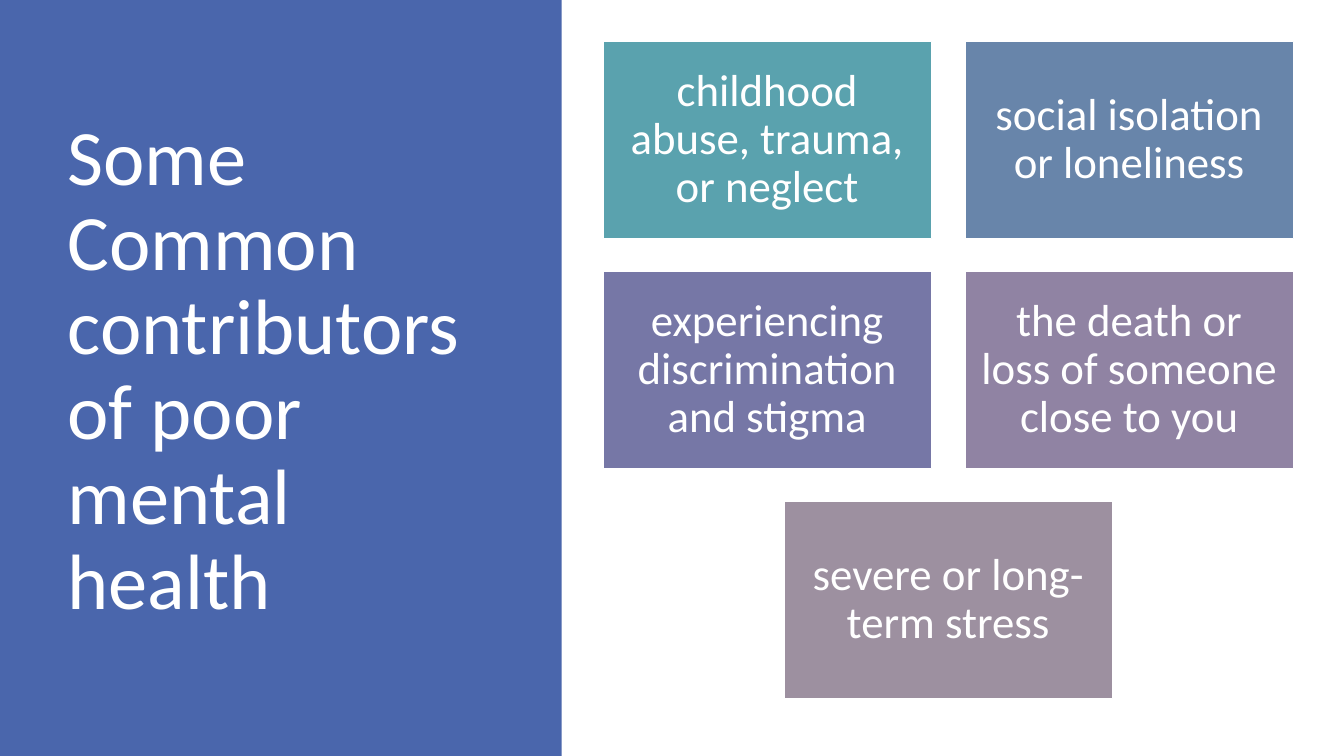
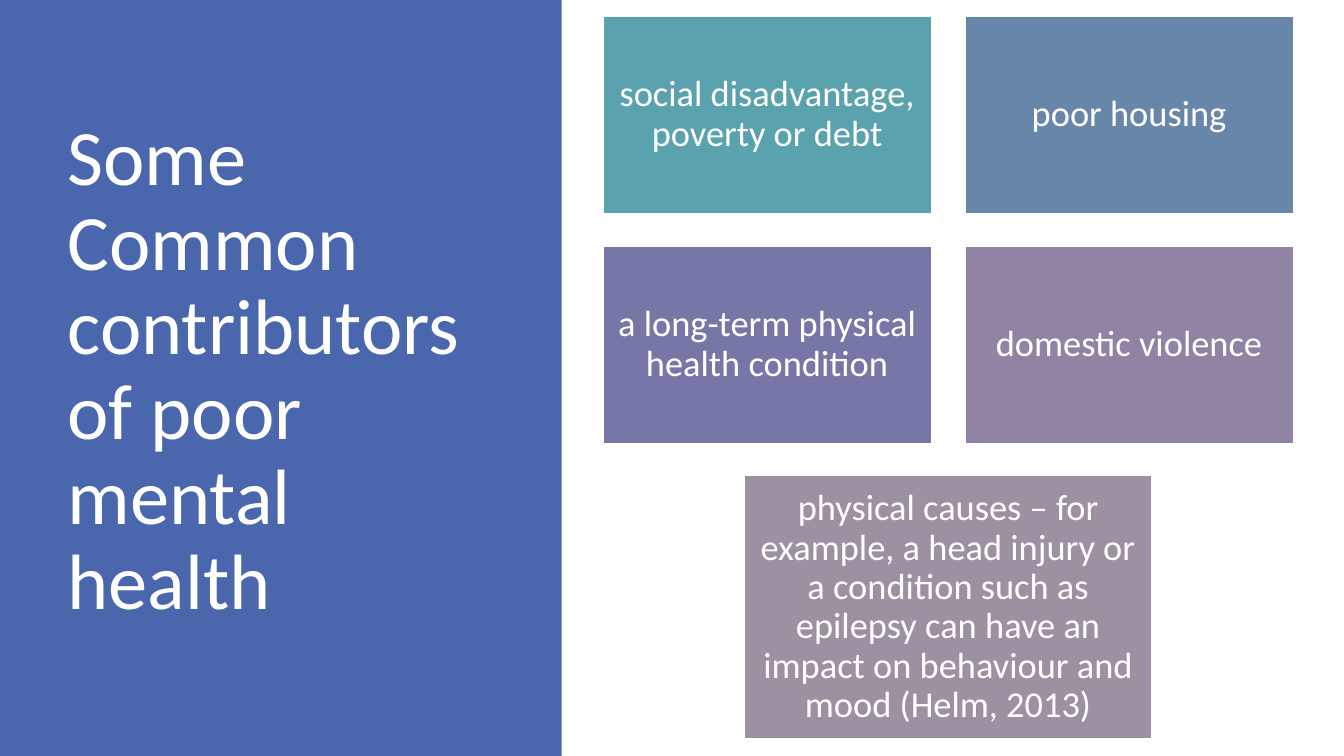
from pptx import Presentation
from pptx.dml.color import RGBColor
from pptx.enum import shapes, text
from pptx.util import Inches, Pt

FONT = "Calibri"
COLORS = {
    "panel": "4A66AC",
    "white": "FFFFFF",
    "tiles": ["5AA2AE", "6885AA", "7677A6", "9083A3", "9D90A0"],
}
SLIDE_W, SLIDE_H = 13.33, 7.5
PANEL_W = 5.57
TITLE_BOX = (0.57, 0.68, 4.16, 6.02)
GRID_LEFT, COLUMNS = 5.98, 2
TILE_W, TILE_H = 3.26, 1.96
GAP_X, GAP_Y = 0.33, 0.32
GRID_W = COLUMNS * TILE_W + (COLUMNS - 1) * GAP_X

TITLE = "Some Common contributors of poor mental health"
SLIDES = [
    {
        "top": 0.41, "size": 32, "inset": 0.13, "last": (TILE_W, TILE_H),
        "causes": [
            "childhood abuse, trauma, or neglect",
            "social isolation or loneliness",
            "experiencing discrimination and stigma",
            "the death or loss of someone close to you",
            "severe or long-term stress",
        ],
    },
    {
        "top": 0.16, "size": 26, "inset": 0.11, "last": (4.04, 2.61),
        "causes": [
            "social disadvantage, poverty or debt",
            "poor housing",
            "a long-term physical health condition",
            "domestic violence",
            "physical causes – for example, a head injury or a condition "
            "such as epilepsy can have an impact on behaviour and mood "
            "(Helm, 2013)",
        ],
    },
]


def rgb(value):
    return RGBColor.from_string(value)


def write(tf, words, size, align):
    tf.text = words
    tf.word_wrap = True
    tf.auto_size = text.MSO_AUTO_SIZE.NONE
    tf.vertical_anchor = text.MSO_ANCHOR.MIDDLE
    p = tf.paragraphs[0]
    p.alignment = align
    p.line_spacing = 0.9
    font = p.runs[0].font
    font.name, font.size = FONT, Pt(size)
    font.color.rgb = rgb(COLORS["white"])


def add_rect(s, box, fill):
    sp = s.shapes.add_shape(shapes.MSO_SHAPE.RECTANGLE, *map(Inches, box))
    sp.shadow.inherit = False
    sp.fill.solid()
    sp.fill.fore_color.rgb = rgb(fill)
    sp.line.fill.background()
    return sp


def add_panel(s):
    panel = add_rect(s, (0, 0, PANEL_W, SLIDE_H), COLORS["panel"])
    title = s.shapes.title
    title.element.addprevious(panel.element)
    title.left, title.top, title.width, title.height = map(Inches, TITLE_BOX)
    write(title.text_frame, TITLE, 56, text.PP_ALIGN.LEFT)


def add_tile(s, box, fill, words, size, inset):
    sp = add_rect(s, box, fill)
    sp.line.color.rgb = rgb(COLORS["white"])
    sp.line.width = Pt(1)
    tf = sp.text_frame
    tf.margin_left = tf.margin_right = Inches(inset)
    tf.margin_top = tf.margin_bottom = Inches(inset)
    write(tf, words, size, text.PP_ALIGN.CENTER)


def tile_box(i, count, top, last):
    row, col = divmod(i, COLUMNS)
    y = top + row * (TILE_H + GAP_Y)
    if i == count - 1:
        w, h = last
        return GRID_LEFT + (GRID_W - w) / 2, y, w, h
    return GRID_LEFT + col * (TILE_W + GAP_X), y, TILE_W, TILE_H


def add_causes(s, top, size, inset, last, causes):
    for i, (words, fill) in enumerate(zip(causes, COLORS["tiles"])):
        box = tile_box(i, len(causes), top, last)
        add_tile(s, box, fill, words, size, inset)


def main():
    prs = Presentation()
    prs.slide_width, prs.slide_height = Inches(SLIDE_W), Inches(SLIDE_H)
    title_only = prs.slide_layouts[5]
    for content in SLIDES:
        s = prs.slides.add_slide(title_only)
        add_panel(s)
        add_causes(s, **content)
    prs.save("out.pptx")


if __name__ == "__main__":
    main()
